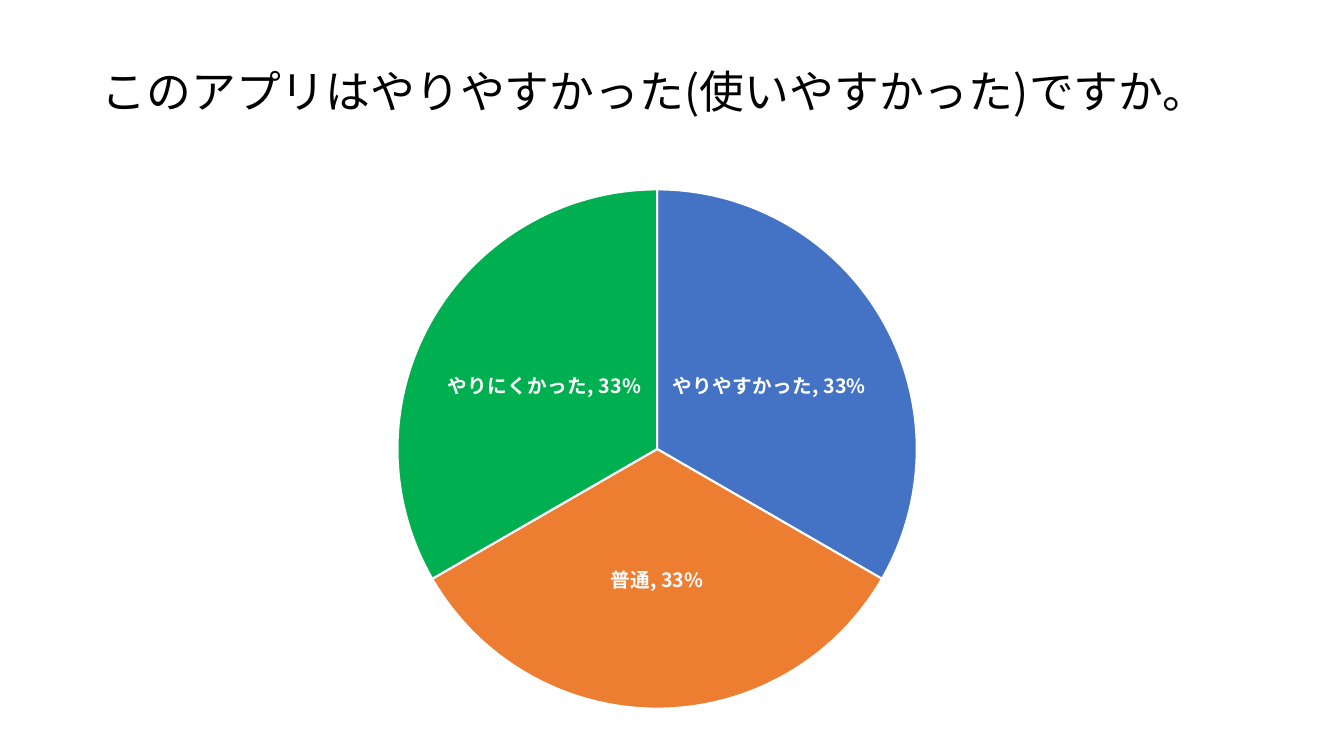
from lxml import etree
from pptx import Presentation
from pptx.chart.data import CategoryChartData
from pptx.dml.color import RGBColor
from pptx.enum.chart import XL_CHART_TYPE as ChartType, XL_LABEL_POSITION as LabelPosition
from pptx.oxml import parse_xml
from pptx.oxml.ns import nsdecls, qn
from pptx.util import Pt

FONT = "Noto Sans CJK JP"
BLACK = RGBColor(0x00, 0x00, 0x00)
WHITE = RGBColor(0xFF, 0xFF, 0xFF)
ANSWERS = [
    ("やりやすかった", 0.33, RGBColor(0x44, 0x72, 0xC4)),
    ("普通", 0.33, RGBColor(0xED, 0x7D, 0x31)),
    ("やりにくかった", 0.33, RGBColor(0x00, 0xB0, 0x50)),
]


def style_font(font, properties, size, color):
    """Set size, colour and the typeface for both Latin and Japanese text."""
    font.size = Pt(size)
    font.color.rgb = color
    font.name = FONT
    east_asian = etree.Element(qn("a:ea"), typeface=FONT)
    properties.find(qn("a:latin")).addnext(east_asian)


prs = Presentation()
prs.slide_width = Pt(960)
prs.slide_height = Pt(540)
slide = prs.slides.add_slide(prs.slide_layouts[6])

# Question
question = slide.shapes.add_textbox(Pt(65.5), Pt(48.2), Pt(785.5), Pt(46))
question.text_frame.word_wrap = True
question.text_frame.text = "このアプリはやりやすかった(使いやすかった)ですか。"
paragraph = question.text_frame.paragraphs[0]
paragraph.line_spacing = 0.85
run = paragraph.runs[0]
style_font(run.font, run.font._element if hasattr(run.font, "_element") else run._r.get_or_add_rPr(), 32, BLACK)

# Answers
chart_data = CategoryChartData(number_format="0%")
chart_data.categories = [answer for answer, share, color in ANSWERS]
chart_data.add_series("Series 1", [share for answer, share, color in ANSWERS])
chart = slide.shapes.add_chart(
    ChartType.PIE, Pt(138.2), Pt(121.7), Pt(662.4), Pt(398.2), chart_data
).chart
chart.has_legend = False
chart.has_title = False
chart.font.name = FONT
chart.font.size = Pt(10)

pie = chart.plots[0]
pie.vary_by_categories = True
for index, (answer, share, color) in enumerate(ANSWERS):
    slice_format = pie.series[0].points[index].format
    slice_format.fill.solid()
    slice_format.fill.fore_color.rgb = color
    slice_format.line.color.rgb = WHITE
    slice_format.line.width = Pt(1.5)

labels = pie.series[0].data_labels
labels.show_category_name = True
labels.show_value = True
labels.show_percentage = False
labels.show_legend_key = False
labels.number_format = "0%"
labels.number_format_is_linked = False
labels.position = LabelPosition.CENTER
labels.font.bold = True
label_properties = labels._element.find(".//" + qn("a:defRPr"))
style_font(labels.font, label_properties, 14, WHITE)
separator = etree.Element(qn("c:separator"))
separator.text = ", "
labels._element.find(qn("c:showBubbleSize")).addnext(separator)

# Pie fills the chart height
plot_area = chart._chartSpace.chart.plotArea
for layout in plot_area.findall(qn("c:layout")):
    plot_area.remove(layout)
plot_area.insert(0, parse_xml(
    f'<c:layout {nsdecls("c")}><c:manualLayout><c:layoutTarget val="inner"/>'
    '<c:xMode val="edge"/><c:yMode val="edge"/><c:x val="0.22"/><c:y val="0.03"/>'
    '<c:w val="0.56"/><c:h val="0.94"/></c:manualLayout></c:layout>'
))

prs.save("out.pptx")
